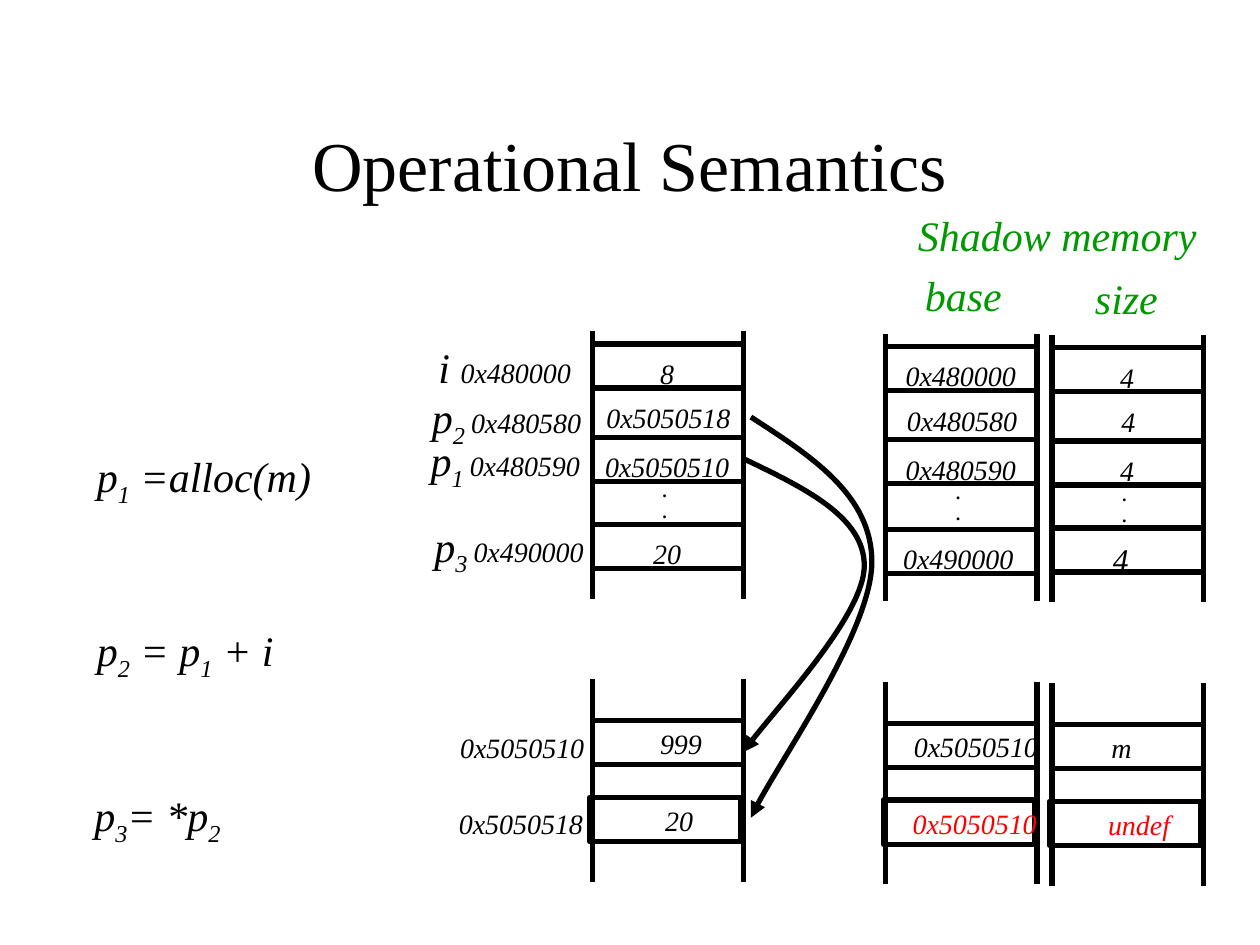
from pptx import Presentation
from pptx.dml.color import RGBColor
from pptx.enum.shapes import MSO_CONNECTOR, MSO_SHAPE
from pptx.enum.text import MSO_ANCHOR, PP_ALIGN
from pptx.oxml import parse_xml
from pptx.oxml.ns import nsdecls, qn
from pptx.util import Inches, Pt

BLACK = RGBColor(0x00, 0x00, 0x00)
GREEN = RGBColor(0x00, 0x99, 0x00)
RED = RGBColor(0xFF, 0x00, 0x00)
FONT = "Times New Roman"
CELL_W, CELL_H = 1.2, 0.35
TEXT_W, TEXT_H = 1.27, 0.37


def style(run, size, color=BLACK, italic=True, bold=False, sub=False):
    font = run.font
    font.name, font.size = FONT, Pt(size)
    font.italic, font.bold = italic, bold
    font.color.rgb = color
    if sub:
        run._r.get_or_add_rPr().set("baseline", "-25000")


def add_box(slide, x, y, w, h, align, wrap):
    frame = slide.shapes.add_textbox(*map(Inches, (x, y, w, h))).text_frame
    frame.word_wrap = wrap
    frame.paragraphs[0].alignment = align
    return frame


def write(slide, text, x, y, w, h=TEXT_H, size=16, wrap=False,
          align=PP_ALIGN.CENTER, **look):
    """Place plain text; each line becomes a paragraph."""
    frame = add_box(slide, x, y, w, h, align, wrap)
    frame.text = text
    for para in frame.paragraphs:
        para.alignment = align
        for run in para.runs:
            style(run, size, **look)
    return frame


def formula(slide, parts, x, y, w, h, align=PP_ALIGN.LEFT, wrap=True):
    """Place runs given as (text, size, is subscript)."""
    para = add_box(slide, x, y, w, h, align, wrap).paragraphs[0]
    for text, size, sub in parts:
        run = para.add_run()
        run.text = text
        style(run, size, sub=sub)


def code(slide, x, y):
    lines = [
        (0.02, 0, ["p", "1", " =alloc(m)"]),
        (0.02, 1.38, ["p", "2", " = p", "1", " + i"]),
        (0, 2.69, ["p", "3", "= *p", "2"]),
    ]
    for dx, dy, words in lines:
        parts = [(word, 24, i % 2 == 1) for i, word in enumerate(words)]
        formula(slide, parts, x + dx, y + dy, 2.88, 0.68)


def labels(slide, x, y):
    """Names and addresses left of the main memory."""
    rows = [
        (0.08, 0, 1.25, "i ", "", "0x480000"),
        (0, 0.4, 1.44, "p", "2 ", "0x480580"),
        (-0.01, 0.74, 1.44, "p", "1 ", "0x480590"),
        (0.02, 1.42, 1.44, "p", "3 ", "0x490000"),
    ]
    for dx, dy, w, name, sub, spot in rows:
        parts = [(name, 24, False), (sub, 24, True), (spot, 16, False)]
        formula(slide, [p for p in parts if p[0]], x + dx, y + dy, w, 0.5,
                PP_ALIGN.CENTER, False)
    write(slide, "0x5050510", x + 0.21, y + 3.09, TEXT_W, wrap=True)
    write(slide, "0x5050518", x + 0.2, y + 3.69, TEXT_W, wrap=True)


def rail(slide, x, top, end):
    line = slide.shapes.add_connector(
        MSO_CONNECTOR.STRAIGHT, *map(Inches, (x, top, x, end)))
    line.line.width = Pt(3)
    line.line.color.rgb = BLACK
    line._element.spPr.append(parse_xml(f"<a:effectLst {nsdecls('a')}/>"))


def cell(slide, x, y):
    rect = slide.shapes.add_shape(
        MSO_SHAPE.RECTANGLE, *map(Inches, (x, y, CELL_W, CELL_H)))
    rect.shadow.inherit = False
    rect.fill.background()
    rect.line.width = Pt(3)
    rect.line.color.rgb = BLACK


def memory(slide, x, y, stack, last, heap):
    """Draw one column: stack values, the cell of p3, then heap cells.

    last is (text, dx, dy, width, size); heap holds (text, dx, width, color).
    """
    for side in (x, x + CELL_W):
        rail(slide, side, y, y + 2.12)
        rail(slide, side, y + 2.76, y + 4.37)
    for dx, dy in ((0, 0.1), (0, 0.84), (0, last[2] - 0.05),
                   (0, 3.09), (-0.02, 3.7)):
        cell(slide, x + dx, y + dy)
    for text, dx, dy in zip(stack, (-0.04, -0.03, -0.04), (0.15, 0.5, 0.89)):
        write(slide, text, x + dx, y + dy, TEXT_W, wrap=True)
    write(slide, ".\n.", x + 0.46, y + 1.13, 0.24, 0.43, 10, bold=True)
    text, dx, dy, w, size = last
    write(slide, text, x + dx, y + dy, w, size=size)
    for (text, dx, w, color), dy in zip(heap, (3.09, 3.7)):
        write(slide, text, x + dx, y + dy, w, color=color)


def pointer(slide, start, *points):
    """Draw a curved arrow; every three points make one Bezier piece."""
    spots = [tuple(map(Inches, p)) for p in (start, *points)]
    pen = slide.shapes.build_freeform(*spots[0])
    pen.add_line_segments(spots[1:], close=False)
    curve = pen.convert_to_shape()
    curve.shadow.inherit = False
    curve.fill.background()
    curve.line.width = Pt(3)
    curve.line.color.rgb = BLACK
    steps = list(curve._element.iter(qn("a:lnTo")))
    for i in range(0, len(steps), 3):
        piece = parse_xml(f"<a:cubicBezTo {nsdecls('a')}/>")
        steps[i].addprevious(piece)
        for step in steps[i:i + 3]:
            piece.append(step[0])
            step.getparent().remove(step)
    curve.line._get_or_add_ln().append(
        parse_xml(f'<a:tailEnd {nsdecls("a")} type="triangle"/>'))


def heads(slide, x, y):
    for text, dx, dy, w in (("Shadow memory", 0, 0, 2.42),
                            ("base", 0.06, 0.48, 0.81),
                            ("size", 1.41, 0.5, 0.7)):
        write(slide, text, x + dx, y + dy, w, 0.5, 24, color=GREEN)


def main():
    deck = Presentation()
    deck.slide_width, deck.slide_height = Inches(10), Inches(7.5)
    slide = deck.slides.add_slide(deck.slide_layouts[6])
    title = write(slide, "Operational Semantics", 0.75, 0.67, 8.5, 1.25, 40,
                  wrap=True, italic=False)
    title.vertical_anchor = MSO_ANCHOR.MIDDLE
    code(slide, 0.65, 3.53)
    labels(slide, 3.3, 2.66)
    pointer(slide, (5.9, 3.64), (6.38, 3.87), (6.86, 4.1), (6.86, 4.49),
            (6.86, 4.87), (6.06, 5.73), (5.9, 5.97))
    pointer(slide, (5.96, 3.31), (6.44, 3.62), (6.92, 3.93), (6.92, 4.46),
            (6.92, 4.99), (6.11, 6.15), (5.96, 6.49))
    memory(slide, 4.7, 2.63, ["8", "0x5050518", "0x5050510"],
           ("20", -0.04, 1.58, TEXT_W, 16),
           [("999", 0.44, 0.53, BLACK), ("20", 0.48, 0.42, BLACK)])
    memory(slide, 7.03, 2.65, ["0x480000", "0x480580", "0x480590"],
           ("0x490000", -0.06, 1.6, TEXT_W, 16),
           [("0x5050510", 0.12, 1.19, BLACK), ("0x5050510", 0.11, 1.19, RED)])
    memory(slide, 8.35, 2.66, ["4", "4", "4"], ("4", 0.38, 1.58, 0.33, 18),
           [("m", 0.37, 0.36, BLACK), ("undef", 0.34, 0.7, RED)])
    heads(slide, 7.18, 1.61)
    deck.save("out.pptx")


if __name__ == "__main__":
    main()
